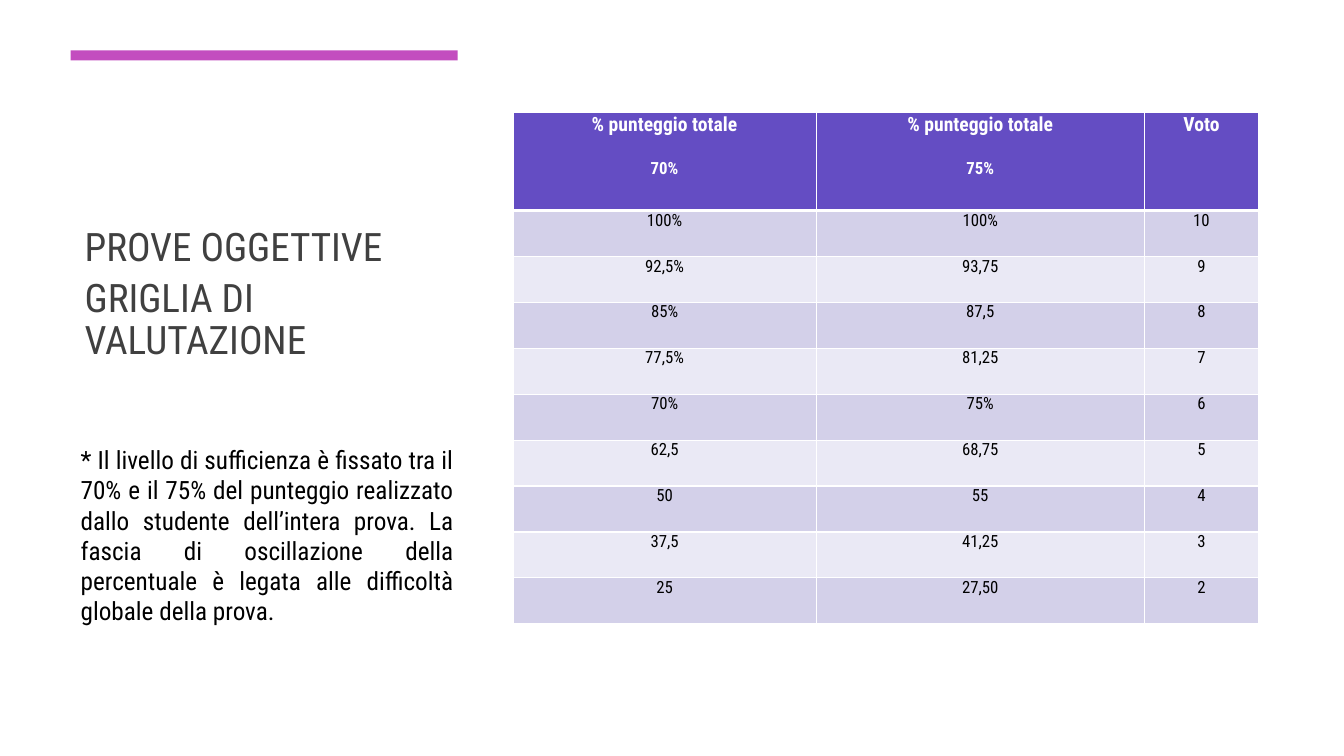
from dataclasses import dataclass
from typing import NamedTuple

from pptx import Presentation
from pptx.dml.color import RGBColor as Color
from pptx.enum.shapes import MSO_SHAPE as Shape
from pptx.enum.text import MSO_ANCHOR as Anchor, MSO_AUTO_SIZE as AutoSize, PP_ALIGN as Align
from pptx.oxml import parse_xml
from pptx.oxml.ns import nsdecls
from pptx.util import Pt


@dataclass(frozen=True)
class Theme:
    font: str = "Roboto Condensed"
    white: str = "FFFFFF"
    black: str = "000000"
    title: str = "404040"
    accent: str = "C34DBF"
    header: str = "644DC3"
    bands: tuple[str, str] = ("D3D0E9", "EAE9F5")
    title_size: float = 28
    body_size: float = 18
    header_size: float = 14
    cell_size: float = 12


class Frame(NamedTuple):
    left: float
    top: float
    width: float
    height: float


class Column(NamedTuple):
    heading: str
    threshold: str
    width: float
    values: tuple[str, ...]


THEME = Theme()
SLIDE_WIDTH, SLIDE_HEIGHT = 960, 540
TITLE_FRAME = Frame(53.3, 162.7, 280.8, 100.1)
BAR_FRAME = Frame(50.4, 36, 276.5, 7.2)
NOTE_FRAME = Frame(50.4, 252, 280.8, 285.8)
NOTE_BOTTOM_INSET = 29
TABLE_LEFT, TABLE_TOP = 366.5, 80.6
HEADER_HEIGHT, ROW_HEIGHT = 69.8, 32.8
CELL_INSET = 3.6
THRESHOLD_GAP = 16.4

TITLE_LINES = ("PROVE OGGETTIVE", "GRIGLIA DI VALUTAZIONE")
NOTE = (
    "* Il livello di sufficienza è fissato tra il 70% e il 75% del punteggio "
    "realizzato dallo studente dell’intera prova. La fascia di oscillazione "
    "della percentuale è legata alle difficoltà globale della prova."
)
COLUMNS = (
    Column("% punteggio totale", "70%", 216.5,
           ("100%", "92,5%", "85%", "77,5%", "70%", "62,5", "50", "37,5", "25")),
    Column("% punteggio totale", "75%", 234.5,
           ("100%", "93,75", "87,5", "81,25", "75%", "68,75", "55", "41,25", "27,50")),
    Column("Voto", "", 81.5, tuple(str(grade) for grade in range(10, 1, -1))),
)


def style_paragraph(para, size: float, color: str, align: Align, bold: bool = False) -> None:
    para.alignment = align
    para.space_before = Pt(0)
    para.font.name = THEME.font
    para.font.size = Pt(size)
    para.font.bold = bold
    para.font.color.rgb = Color.from_string(color)


def place(shape, frame: Frame) -> None:
    shape.left, shape.top, shape.width, shape.height = (Pt(length) for length in frame)


def fill_placeholder(box, frame: Frame, lines: tuple[str, ...], anchor: Anchor):
    place(box, frame)
    text = box.text_frame
    text.text = "\n".join(lines)
    text.word_wrap = True
    text.auto_size = AutoSize.NONE
    text.vertical_anchor = anchor
    return text


def add_title(slide) -> None:
    text = fill_placeholder(slide.shapes.title, TITLE_FRAME, TITLE_LINES, Anchor.BOTTOM)
    for para in text.paragraphs:
        style_paragraph(para, THEME.title_size, THEME.title, Align.LEFT)
        para.line_spacing = 0.9
        para.space_after = Pt(6)


def add_note(slide) -> None:
    text = fill_placeholder(slide.placeholders[1], NOTE_FRAME, (NOTE,), Anchor.MIDDLE)
    text.margin_bottom = Pt(NOTE_BOTTOM_INSET)
    para = text.paragraphs[0]
    style_paragraph(para, THEME.body_size, THEME.black, Align.JUSTIFY)
    properties = para._p.get_or_add_pPr()
    properties.set("marL", "0")
    properties.set("indent", "0")
    bullet = parse_xml(f"<a:buNone {nsdecls('a')}/>")
    properties.insert_element_before(bullet, "a:tabLst", "a:defRPr", "a:extLst")


def add_bar(slide) -> None:
    bar = slide.shapes.add_shape(Shape.RECTANGLE, *(Pt(length) for length in BAR_FRAME))
    bar.shadow.inherit = False
    bar.fill.solid()
    bar.fill.fore_color.rgb = Color.from_string(THEME.accent)
    bar.line.fill.background()


def format_cell(cell, fill: str, bottom_border: float = 1) -> None:
    cell.margin_left = cell.margin_right = Pt(CELL_INSET)
    cell.margin_top = cell.margin_bottom = Pt(0)
    cell.vertical_anchor = Anchor.TOP
    properties = cell._tc.get_or_add_tcPr()
    for side, width in (("L", 1), ("R", 1), ("T", 1), ("B", bottom_border)):
        properties.append(parse_xml(
            f'<a:ln{side} {nsdecls("a")} w="{Pt(width)}"><a:solidFill>'
            f'<a:srgbClr val="{THEME.white}"/></a:solidFill></a:ln{side}>'
        ))
    cell.fill.solid()
    cell.fill.fore_color.rgb = Color.from_string(fill)


def write_header(cell, column: Column) -> None:
    text = cell.text_frame
    text.text = column.heading
    style_paragraph(text.paragraphs[0], THEME.header_size, THEME.white, Align.CENTER, True)
    if column.threshold:
        para = text.add_paragraph()
        para.text = column.threshold
        style_paragraph(para, THEME.cell_size, THEME.white, Align.CENTER, True)
        para.space_before = Pt(THRESHOLD_GAP)
    format_cell(cell, THEME.header, bottom_border=3)


def add_grade_table(slide) -> None:
    row_count = len(COLUMNS[0].values)
    width = sum(column.width for column in COLUMNS)
    height = HEADER_HEIGHT + row_count * ROW_HEIGHT
    table = slide.shapes.add_table(
        row_count + 1, len(COLUMNS), Pt(TABLE_LEFT), Pt(TABLE_TOP), Pt(width), Pt(height)
    ).table
    for index, row in enumerate(table.rows):
        row.height = Pt(ROW_HEIGHT if index else HEADER_HEIGHT)
    for column_index, column in enumerate(COLUMNS):
        table.columns[column_index].width = Pt(column.width)
        write_header(table.cell(0, column_index), column)
        for row_index, value in enumerate(column.values):
            cell = table.cell(row_index + 1, column_index)
            cell.text = value
            para = cell.text_frame.paragraphs[0]
            style_paragraph(para, THEME.cell_size, THEME.black, Align.CENTER)
            format_cell(cell, THEME.bands[row_index % 2])


def main() -> None:
    deck = Presentation()
    deck.slide_width, deck.slide_height = Pt(SLIDE_WIDTH), Pt(SLIDE_HEIGHT)
    slide = deck.slides.add_slide(deck.slide_layouts[1])
    slide.background.fill.solid()
    slide.background.fill.fore_color.rgb = Color.from_string(THEME.white)
    add_title(slide)
    add_bar(slide)
    add_note(slide)
    add_grade_table(slide)
    deck.save("out.pptx")


if __name__ == "__main__":
    main()
